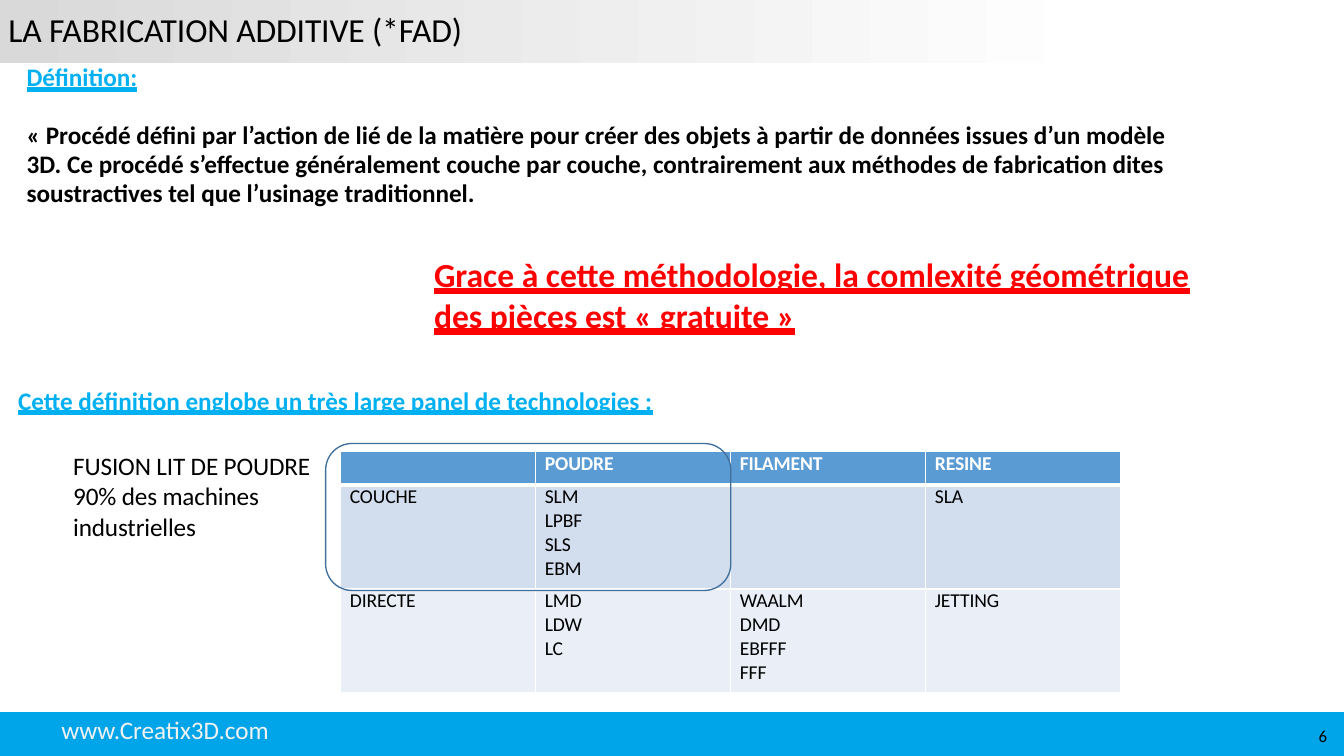
from dataclasses import dataclass

from lxml import etree
from pptx import Presentation
from pptx.dml.color import RGBColor
from pptx.enum.shapes import MSO_SHAPE
from pptx.enum.text import MSO_ANCHOR, MSO_UNDERLINE
from pptx.oxml.ns import qn
from pptx.util import Pt

RECTANGLE = MSO_SHAPE.RECTANGLE
ROUNDED = MSO_SHAPE.ROUNDED_RECTANGLE
TOP = MSO_ANCHOR.TOP
MIDDLE = MSO_ANCHOR.MIDDLE
HEAVY = MSO_UNDERLINE.HEAVY_LINE

WIDTH, HEIGHT = 960, 540


@dataclass(frozen=True)
class Theme:
    font: str = "Calibri"
    black: str = "000000"
    white: str = "FFFFFF"
    red: str = "FF0000"
    heading: str = "00B0F0"
    footer: str = "00A4E9"
    site: str = "F2F2F2"
    banner: str = "D9D9D9"
    outline: str = "41709C"
    header: str = "5B9BD4"
    bands: tuple = ("D2DEEE", "EAEEF7")
    large: int = 24
    body: int = 18
    cell: int = 14
    small: int = 12
    tracking: float = -0.1


class SlideBuilder:
    def __init__(self, slide, theme):
        self.slide = slide
        self.theme = theme

    def color(self, value):
        return RGBColor.from_string(value)

    def run(self, paragraph, text, size, color, bold=False, underline=False, tracking=None):
        run = paragraph.add_run()
        run.text = text
        font = run.font
        font.name = self.theme.font
        font.size = Pt(size)
        font.bold = bold
        font.underline = underline
        font.color.rgb = self.color(color)
        spacing = self.theme.tracking if tracking is None else tracking
        run._r.get_or_add_rPr().set("spc", str(round(spacing * 100)))

    def shape(self, kind, left, top, width, height):
        shape = self.slide.shapes.add_shape(kind, Pt(left), Pt(top), Pt(width), Pt(height))
        shape.shadow.inherit = False
        return shape

    def bar(self, top, height, color):
        bar = self.shape(RECTANGLE, 0, top, WIDTH, height)
        bar.fill.solid()
        bar.fill.fore_color.rgb = self.color(color)
        bar.line.fill.background()

    def fading_bar(self, top, height, start, end, end_position):
        bar = self.shape(RECTANGLE, 0, top, WIDTH, height)
        bar.fill.gradient()
        bar.fill.gradient_angle = 0
        for stop, color, position in zip(bar.fill.gradient_stops, (start, end), (0, end_position)):
            stop.color.rgb = self.color(color)
            stop.position = position
        bar.line.fill.background()

    def frame(self, left, top, width, height, color):
        frame = self.shape(ROUNDED, left, top, width, height)
        frame.adjustments[0] = 0.18
        frame.fill.background()
        frame.line.color.rgb = self.color(color)
        frame.line.width = Pt(0.96)

    def text(self, left, top, width, height, paragraphs, padded=True, anchor=TOP,
             line_spacing=None, gap=0):
        box = self.slide.shapes.add_textbox(Pt(left), Pt(top), Pt(width), Pt(height))
        frame = box.text_frame
        frame.word_wrap = True
        frame.vertical_anchor = anchor
        if not padded:
            frame.margin_left = frame.margin_right = 0
            frame.margin_top = frame.margin_bottom = 0
        for index, runs in enumerate(paragraphs):
            paragraph = frame.add_paragraph() if index else frame.paragraphs[0]
            if index and gap:
                paragraph.space_before = Pt(gap)
            if index and line_spacing:
                paragraph.line_spacing = Pt(line_spacing)
            for run in runs:
                self.run(paragraph, **run)

    def borders(self, cell, top, bottom):
        properties = cell._tc.get_or_add_tcPr()
        sides = (("a:lnL", 1), ("a:lnR", 1), ("a:lnT", top), ("a:lnB", bottom))
        for position, (tag, width) in enumerate(sides):
            line = etree.Element(qn(tag), w=str(Pt(width)))
            fill = etree.SubElement(line, qn("a:solidFill"))
            etree.SubElement(fill, qn("a:srgbClr"), val=self.theme.white)
            properties.insert(position, line)

    def cell(self, cell, lines, fill, color, bold, top, bottom):
        cell.margin_left = Pt(6.5)
        cell.margin_right = cell.margin_top = cell.margin_bottom = 0
        cell.fill.solid()
        cell.fill.fore_color.rgb = self.color(fill)
        self.borders(cell, top, bottom)
        paragraph = cell.text_frame.paragraphs[0]
        for index, line in enumerate(lines):
            if index:
                paragraph.add_line_break()
            self.run(paragraph, line, self.theme.cell, color, bold)

    def table(self, left, top, column_width, row_heights, rows):
        columns = len(rows[0])
        table = self.slide.shapes.add_table(
            len(rows), columns, Pt(left), Pt(top),
            Pt(column_width * columns), Pt(sum(row_heights))).table
        for column in table.columns:
            column.width = Pt(column_width)
        fills = (self.theme.header, *self.theme.bands)
        for index, (height, values) in enumerate(zip(row_heights, rows)):
            table.rows[index].height = Pt(height)
            is_header = index == 0
            color = self.theme.white if is_header else self.theme.black
            for column, lines in enumerate(values):
                self.cell(table.cell(index, column), lines, fills[index], color, is_header,
                          top=3 if index == 1 else 1, bottom=3 if is_header else 1)


def main():
    presentation = Presentation()
    presentation.slide_width = Pt(WIDTH)
    presentation.slide_height = Pt(HEIGHT)
    theme = Theme()
    slide = presentation.slides.add_slide(presentation.slide_layouts[6])
    builder = SlideBuilder(slide, theme)

    plain = dict(size=theme.body, color=theme.black)
    heading = dict(size=theme.body, color=theme.heading, bold=True, underline=HEAVY, tracking=0)
    emphasis = dict(size=theme.large, color=theme.red, bold=True, underline=HEAVY, tracking=0)

    builder.bar(508.7, 31.3, theme.footer)
    builder.text(36.7, 506.5, 228, 29, [[
        dict(text="www.Creatix3D.com", size=theme.body, color=theme.site, tracking=0)]],
        anchor=MIDDLE)
    builder.fading_bar(0, 45, theme.banner, theme.white, 0.82)

    technologies = [
        [[], ["POUDRE"], ["FILAMENT"], ["RESINE"]],
        [["COUCHE"], ["SLM", "LPBF", "SLS", "EBM"], [], ["SLA"]],
        [["DIRECTE"], ["LMD", "LDW", "LC"], ["WAALM", "DMD", "EBFFF", "FFF"], ["JETTING"]],
    ]
    builder.table(243.4, 322.6, 139.3, (24, 74.2, 74.2), technologies)
    builder.frame(232.6, 316.8, 289.4, 105, theme.outline)

    definition = (
        "« Procédé défini par l’action de lié de la matière pour créer des objets à partir de "
        "données issues d’un modèle 3D. Ce procédé s’effectue généralement couche par couche, "
        "contrairement aux méthodes de fabrication dites soustractives tel que l’usinage "
        "traditionnel.")
    builder.text(19, 44, 824, 124.6, [
        [dict(text="Définition:", **heading)],
        [dict(text=definition, bold=True, tracking=0, **plain)],
    ], padded=False, line_spacing=20.6, gap=20.6)

    builder.text(941.8, 518.5, 12, 14, [[
        dict(text="6", size=theme.small, color=theme.black, tracking=0)]], padded=False)
    builder.text(6, 6, 594, 29, [[
        dict(text="LA FABRICATION ADDITIVE (*FAD)", size=theme.large, color=theme.black)]],
        padded=False)
    builder.text(45.2, 318.2, 234, 94, [
        [dict(text="FUSION LIT DE POUDRE", **plain)],
        [dict(text="90% des machines industrielles", **plain)],
    ])
    builder.text(5.8, 271.4, 516, 51, [[
        dict(text="Cette définition englobe un très large panel de technologies :", **heading)]])
    builder.text(303, 178, 571, 65.4, [[
        dict(text="Grace à cette méthodologie, la comlexité géométrique des pièces est "
                  "« gratuite »", **emphasis)]])

    presentation.save("out.pptx")


if __name__ == "__main__":
    main()
